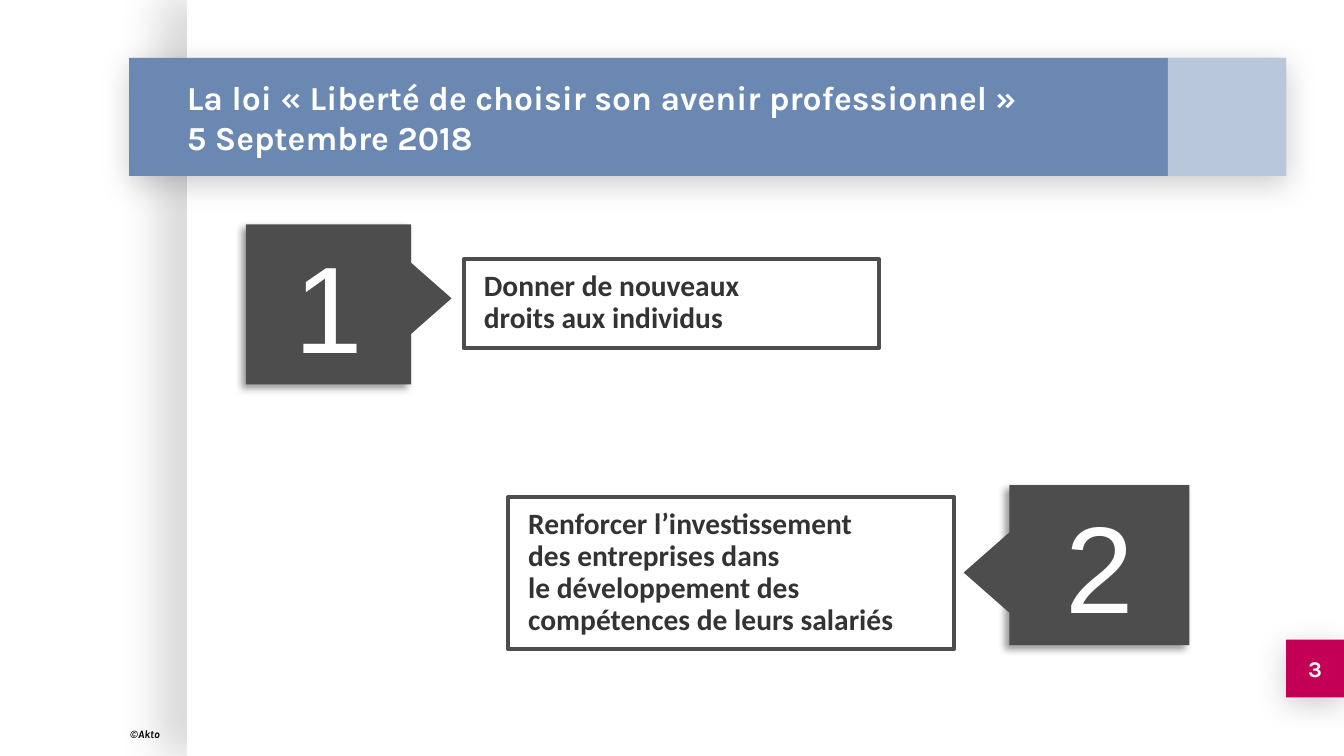
from dataclasses import dataclass
from typing import Optional

from lxml.etree import SubElement
from pptx import Presentation
from pptx.dml.color import RGBColor
from pptx.enum.shapes import MSO_SHAPE
from pptx.enum.text import MSO_ANCHOR, MSO_AUTO_SIZE, PP_ALIGN
from pptx.oxml.ns import qn
from pptx.util import Inches, Pt

COLUMNS, ROWS = 100, 56.25
CELL = Inches(0.1)
COLORS = {
    "white": "FFFFFF", "black": "000000", "magenta": "C40056",
    "blue": "6A88B2", "grey": "4D4D4D", "ink": "333333",
}


@dataclass(frozen=True)
class Area:
    """Place on the grid, in columns and rows."""
    column: float
    row: float
    width: float
    height: float

    def lengths(self) -> list[int]:
        """Return left, top, width and height."""
        cells = (self.column, self.row, self.width, self.height)
        return [round(cell * CELL) for cell in cells]


@dataclass(frozen=True)
class Shadow:
    """Outer shadow: percent, points, points and degrees."""
    opacity: int
    blur: float
    distance: float
    direction: int


@dataclass(frozen=True)
class Panel:
    """Plain filled rectangle."""
    area: Area
    color: str
    shadow: Optional[Shadow] = None
    opacity: int = 100


@dataclass(frozen=True)
class Style:
    """Font and paragraph look."""
    font: str
    size: float
    color: str
    bold: bool = False
    italic: bool = False
    align: PP_ALIGN = PP_ALIGN.LEFT
    spacing: float = 1.0


@dataclass(frozen=True)
class Step:
    """Numbered marker with its arrow and framed message."""
    number: str
    marker: Area
    arrow: Area
    rotation: int
    frame: Area
    paragraphs: list[list[str]]


LIFTED = Shadow(20, 16.9, 3.8, 90)
MARKER_SHADOW = Shadow(40, 4, 3, 135)
BADGE = Area(95.7, 47.6, 4.3, 4.3)
PANELS = [
    Panel(Area(13.9, 0, 86.1, ROWS), "white", Shadow(15, 22.5, 15, 180)),
    Panel(BADGE, "magenta", LIFTED),
    Panel(Area(9.6, 4.3, 86.1, 8.8), "blue", LIFTED),
    Panel(Area(86.9, 4.3, 8.8, 8.8), "white", opacity=53),
]
TITLE = [["La loi « Liberté de choisir son avenir professionnel » ", "5 Septembre 2018"]]
TITLE_STYLE = Style("Karla", 18, "white", bold=True)
MESSAGE_STYLE = Style("Calibri", 15.8, "ink", bold=True, spacing=0.9)
NUMBER_STYLE = Style("Arial", 66, "white", align=PP_ALIGN.CENTER)
BADGE_STYLE = Style("Karla", 12, "white", bold=True, align=PP_ALIGN.CENTER)
CREDIT_STYLE = Style("Karla", 6, "black", bold=True, italic=True, align=PP_ALIGN.JUSTIFY)
STEPS = [
    Step("1", Area(18.3, 16.7, 12.3, 11.9), Area(29.5, 18.6, 4.1, 7.2), 0,
         Area(34.5, 19.3, 30.9, 6.6),
         [["Donner de nouveaux"], ["droits aux individus"]]),
    Step("2", Area(75.1, 36.1, 13.4, 11.9), Area(71.7, 39, 4.1, 7.2), 180,
         Area(37.8, 37, 33.2, 11.3),
         [["Renforcer l’investissement ", "des entreprises dans"],
          ["le développement des compétences de leurs salariés"]]),
]


def rgb(name: str) -> RGBColor:
    """Return a named colour."""
    return RGBColor.from_string(COLORS[name])


def set_alpha(color_element, percent: int) -> None:
    """Make a colour element translucent."""
    SubElement(color_element, qn("a:alpha"), val=str(percent * 1000))


def add_shadow(shape, shadow: Shadow) -> None:
    """Give a shape an outer shadow."""
    effects = shape._element.spPr.find(qn("a:effectLst"))
    outer = SubElement(
        effects, qn("a:outerShdw"), blurRad=str(Pt(shadow.blur)),
        dist=str(Pt(shadow.distance)), dir=str(shadow.direction * 60000),
        algn="ctr", rotWithShape="0")
    set_alpha(SubElement(outer, qn("a:srgbClr"), val=COLORS["black"]), shadow.opacity)


def write(box, paragraphs: list[list[str]], style: Style,
          margins: tuple[float, float], anchor: MSO_ANCHOR) -> None:
    """Write paragraphs, each a list of lines, into a box."""
    frame = box.text_frame
    frame.word_wrap = True
    frame.auto_size = MSO_AUTO_SIZE.NONE
    frame.vertical_anchor = anchor
    frame.margin_left = frame.margin_right = Inches(margins[0])
    frame.margin_top = frame.margin_bottom = Inches(margins[1])
    for index, lines in enumerate(paragraphs):
        para = frame.add_paragraph() if index else frame.paragraphs[0]
        for position, line in enumerate(lines):
            if position:
                para.add_line_break()
            para.add_run().text = line
        para.alignment = style.align
        para.line_spacing = style.spacing
        para.space_before = Pt(0)
        font = para.font
        font.name, font.size = style.font, Pt(style.size)
        font.bold, font.italic = style.bold, style.italic
        font.color.rgb = rgb(style.color)


def add_solid(shapes, kind: MSO_SHAPE, area: Area, color: str):
    """Add a filled shape without outline or shadow."""
    shape = shapes.add_shape(kind, *area.lengths())
    shape.shadow.inherit = False
    shape.fill.solid()
    shape.fill.fore_color.rgb = rgb(color)
    shape.line.fill.background()
    return shape


def add_panel(shapes, panel: Panel):
    """Add a rectangle with its shadow and opacity."""
    shape = add_solid(shapes, MSO_SHAPE.RECTANGLE, panel.area, panel.color)
    if panel.shadow:
        add_shadow(shape, panel.shadow)
    if panel.opacity < 100:
        fill = shape._element.spPr.find(qn("a:solidFill"))
        set_alpha(fill.find(qn("a:srgbClr")), panel.opacity)
    return shape


def add_step(page, step: Step) -> None:
    """Add a framed message and its grouped marker."""
    frame = page.shapes.add_shape(MSO_SHAPE.RECTANGLE, *step.frame.lengths())
    frame.shadow.inherit = False
    frame.fill.background()
    frame.line.color.rgb = rgb("grey")
    frame.line.width = Pt(2.25)
    write(frame, step.paragraphs, MESSAGE_STYLE, (0.15, 0.09), MSO_ANCHOR.TOP)
    group = page.shapes.add_group_shape()
    marker = add_panel(group.shapes, Panel(step.marker, "grey", MARKER_SHADOW))
    write(marker, [[step.number]], NUMBER_STYLE, (0.04, 0.04), MSO_ANCHOR.TOP)
    arrow = add_solid(group.shapes, MSO_SHAPE.RIGHT_ARROW, step.arrow, "grey")
    arrow.adjustments[0], arrow.adjustments[1] = 0.32, 1.36
    arrow.rotation = step.rotation


def main() -> None:
    """Build and save the deck."""
    deck = Presentation()
    deck.slide_width, deck.slide_height = round(COLUMNS * CELL), round(ROWS * CELL)
    page = deck.slides.add_slide(deck.slide_layouts[5])
    for panel in PANELS:
        add_panel(page.shapes, panel)
    title = page.shapes.title
    page.shapes.element.append(title.element)
    title.left, title.top, title.width, title.height = Area(12.9, 4.3, 73.7, 8.8).lengths()
    write(title, TITLE, TITLE_STYLE, (0.1, 0.1), MSO_ANCHOR.MIDDLE)
    for step in STEPS:
        add_step(page, step)
    badge = page.shapes.add_textbox(*BADGE.lengths())
    write(badge, [["3"]], BADGE_STYLE, (0.1, 0.1), MSO_ANCHOR.MIDDLE)
    credit = page.shapes.add_textbox(*Area(8.7, 53.6, 5.5, 2).lengths())
    write(credit, [["©Akto"]], CREDIT_STYLE, (0.1, 0.05), MSO_ANCHOR.TOP)
    deck.save("out.pptx")


if __name__ == "__main__":
    main()
